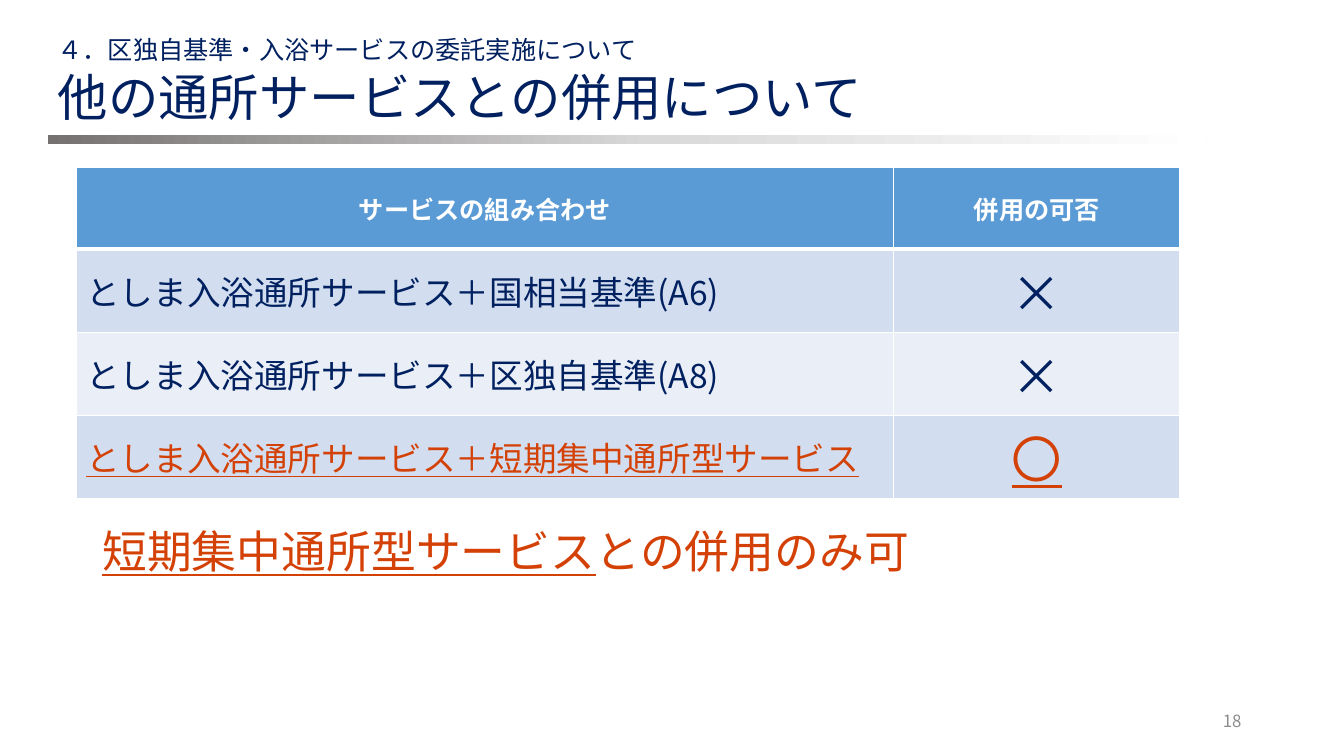
from copy import deepcopy

from lxml import etree
from pptx import Presentation
from pptx.dml.color import RGBColor
from pptx.enum.shapes import MSO_SHAPE
from pptx.enum.text import MSO_ANCHOR, MSO_AUTO_SIZE, PP_ALIGN
from pptx.oxml.ns import qn
from pptx.util import Pt

LEFT, CENTER, RIGHT = PP_ALIGN.LEFT, PP_ALIGN.CENTER, PP_ALIGN.RIGHT
MIDDLE = MSO_ANCHOR.MIDDLE
NO_AUTOFIT = MSO_AUTO_SIZE.NONE
BAR_SHAPE = MSO_SHAPE.FLOWCHART_PROCESS

FONT = "Noto Sans CJK JP"
NAVY = RGBColor(0x00, 0x20, 0x60)
ORANGE = RGBColor(0xD4, 0x41, 0x06)
GRAY = RGBColor(0x8C, 0x8C, 0x8C)
WHITE = RGBColor(0xFF, 0xFF, 0xFF)
HEADER_BLUE = RGBColor(0x5B, 0x9B, 0xD5)
BAND_DARK = RGBColor(0xD2, 0xDE, 0xEF)
BAND_LIGHT = RGBColor(0xEA, 0xEF, 0xF7)
BAR_DARK = RGBColor(0x76, 0x71, 0x71)
BAR_LIGHT = RGBColor(0xD9, 0xD9, 0xD9)


def add_text(para, text, size, color=NAVY, bold=False, underline=False, align=LEFT):
    para.alignment = align
    span = para.add_run()
    span.text = text
    font = span.font
    font.size, font.bold, font.underline = Pt(size), bold, underline
    font.color.rgb = color
    font.name = FONT
    etree.SubElement(span._r.get_or_add_rPr(), qn("a:ea"), typeface=FONT)


def place_text(box, left, top, width, height):
    box.left, box.top, box.width, box.height = Pt(left), Pt(top), Pt(width), Pt(height)
    frame = box.text_frame
    frame.word_wrap = True
    frame.auto_size = NO_AUTOFIT
    frame.vertical_anchor = MIDDLE
    return frame.paragraphs[0]


deck = Presentation()
deck.slide_width, deck.slide_height = Pt(960), Pt(540)
page = deck.slides.add_slide(deck.slide_layouts[5])

# Title
title_para = place_text(page.shapes.title, 34, 38, 914, 61)
add_text(title_para, "他の通所サービスとの併用について", 36)

# Gradient bar under the title
bar = page.shapes.add_shape(BAR_SHAPE, Pt(34), Pt(96.7), Pt(828), Pt(6))
bar.shadow.inherit = False
bar.line.fill.background()
bar.fill.gradient()
bar.fill.gradient_angle = 0
stop_list = bar._element.spPr.find(qn("a:gradFill")).find(qn("a:gsLst"))
stop_list.append(deepcopy(stop_list[0]))
bar_stops = [(0, BAR_DARK), (0.52, BAR_LIGHT), (1, WHITE)]
for stop, (position, color) in zip(bar.fill.gradient_stops, bar_stops):
    stop.position = position
    stop.color.rgb = color

# Section heading, conclusion and page number
texts = [
    ((34, 20, 438, 30), [("４．区独自基準・入浴サービスの委託実施について", {"size": 18})]),
    ((66, 368, 763, 50), [
        ("短期集中通所型サービス", {"size": 32, "color": ORANGE, "underline": True}),
        ("との併用のみ可", {"size": 32, "color": ORANGE}),
    ]),
    ((678, 500.5, 216, 29), [("18", {"size": 12, "color": GRAY, "align": RIGHT})]),
]
for place, spans in texts:
    para = place_text(page.shapes.add_textbox(0, 0, 0, 0), *place)
    for text, style in spans:
        add_text(para, text, **style)

# Table of service combinations
rows = [
    ("サービスの組み合わせ", "併用の可否"),
    ("としま入浴通所サービス＋国相当基準(A6)", "×"),
    ("としま入浴通所サービス＋区独自基準(A8)", "×"),
    ("としま入浴通所サービス＋短期集中通所型サービス", "〇"),
]
row_fills = [HEADER_BLUE, BAND_DARK, BAND_LIGHT, BAND_DARK]
table = page.shapes.add_table(4, 2, Pt(54.4), Pt(119.7), Pt(788.4), Pt(235.7)).table
for column, width in zip(table.columns, (584, 204.4)):
    column.width = Pt(width)

for r, row in enumerate(rows):
    header, allowed = r == 0, r == 3
    table.rows[r].height = Pt(58.4 if header else 59.1)
    for c, text in enumerate(row):
        cell = table.cell(r, c)
        cell.vertical_anchor = MIDDLE
        add_text(
            cell.text_frame.paragraphs[0],
            text,
            size=18 if header else (24, 36)[c],
            color=WHITE if header else ORANGE if allowed else NAVY,
            bold=header,
            underline=allowed,
            align=CENTER if header or c == 1 else LEFT,
        )
        # White borders, thicker between the header and the body
        for side in ("L", "R", "T", "B"):
            thick = (r, side) in ((0, "B"), (1, "T"))
            border = etree.SubElement(
                cell._tc.get_or_add_tcPr(), qn(f"a:ln{side}"), w=str(Pt(3 if thick else 1))
            )
            paint = etree.SubElement(border, qn("a:solidFill"))
            etree.SubElement(paint, qn("a:srgbClr"), val=str(WHITE))
        cell.fill.solid()
        cell.fill.fore_color.rgb = row_fills[r]

deck.save("out.pptx")
